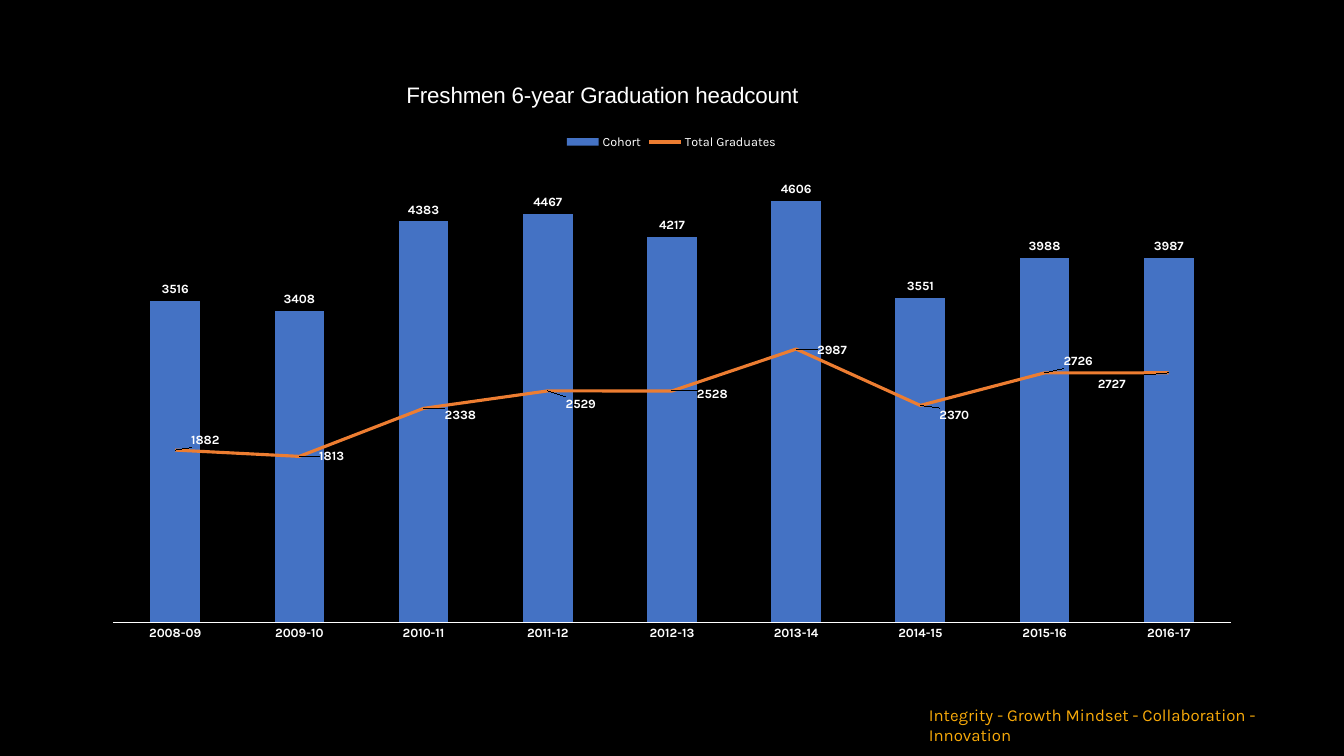
from dataclasses import dataclass
from typing import Any, Optional

import lxml.etree
import pptx
import pptx.chart.data
import pptx.dml.color
import pptx.enum.chart
import pptx.enum.text
import pptx.oxml.ns
import pptx.util

Cm = pptx.util.Cm
Pt = pptx.util.Pt
qn = pptx.oxml.ns.qn

COLORS = {
    "background": "000000",
    "text": "FFFFFF",
    "cohort": "4472C4",
    "graduates": "ED7D31",
    "motto": "F8AA0A",
}
FONTS = {
    "chart": {"name": "Karla", "size": Pt(10)},
    "title": {"name": "Arial", "size": Pt(16), "bold": False},
    "legend": {"name": "Karla", "size": Pt(9), "bold": False},
    "label": {"name": "Karla", "size": Pt(9), "bold": True},
    "motto": {"name": "Karla", "size": Pt(12)},
}


@dataclass(frozen=True)
class Box:
    left: float
    top: float
    width: Optional[float] = None
    height: Optional[float] = None

    def lengths(self) -> list[int]:
        return [Cm(v) for v in (self.left, self.top, self.width, self.height)]


@dataclass(frozen=True)
class Headcount:
    name: str
    values: tuple[int, ...]


CHART_BOX = Box(2.24, 1.73, 29.36, 14.71)
PLOT_BOX = Box(0.61, 2.43, 28.17, 11.52)
TITLE_BOX = Box(7.9, 0.2)
MOTTO_BOX = Box(23.16, 17.63, 10.03, 0.76)

YEARS = [f"{year}-{year % 100 + 1:02d}" for year in range(2008, 2017)]
HEADCOUNTS = (
    Headcount("Cohort", (3516, 3408, 4383, 4467, 4217, 4606, 3551, 3988, 3987)),
    Headcount("Total Graduates", (1882, 1813, 2338, 2529, 2528, 2987, 2370, 2726, 2727)),
)
GRADUATE_LABEL_SHIFTS = (
    Box(0.3, -0.25), Box(0.4, 0), Box(0.43, 0.18),
    Box(0.35, 0.33), Box(0.53, 0.08), Box(0.43, 0.03),
    Box(0.38, 0.25), Box(0.38, -0.3), Box(-1.89, 0.28),
)


def rgb(color: str) -> pptx.dml.color.RGBColor:
    return pptx.dml.color.RGBColor.from_string(COLORS[color])


def set_attributes(target: Any, values: dict[str, Any]) -> None:
    for attribute, value in values.items():
        setattr(target, attribute, value)


def style_font(font: Any, style: str, color: str = "text") -> None:
    set_attributes(font, FONTS[style])
    font.color.rgb = rgb(color)


def add_element(parent: Any, tag: str, value: Any = None) -> Any:
    element = lxml.etree.SubElement(parent, qn(tag))
    if value is not None:
        element.set("val", str(value))
    return element


def set_layout(parent: Any, box: Box, after: Optional[str] = None) -> None:
    for previous in parent.findall(qn("c:layout")):
        parent.remove(previous)
    layout = add_element(parent, "c:layout")
    manual = add_element(layout, "c:manualLayout")
    if box.width is not None:
        add_element(manual, "c:layoutTarget", "inner")
    if after != "c:idx":
        add_element(manual, "c:xMode", "edge")
        add_element(manual, "c:yMode", "edge")
    fractions = {
        "c:x": (box.left, CHART_BOX.width),
        "c:y": (box.top, CHART_BOX.height),
        "c:w": (box.width, CHART_BOX.width),
        "c:h": (box.height, CHART_BOX.height),
    }
    for tag, (length, whole) in fractions.items():
        if length is not None:
            add_element(manual, tag, length / whole)
    if after:
        parent.find(qn(after)).addnext(layout)
    else:
        parent.insert(0, layout)


def move_graduates_to_line(plot_area: Any) -> None:
    bars = plot_area.find(qn("c:barChart"))
    graduates = bars.findall(qn("c:ser"))[1]
    for bar_setting in graduates.findall(qn("c:invertIfNegative")):
        graduates.remove(bar_setting)
    line = add_element(plot_area, "c:lineChart")
    add_element(line, "c:grouping", "standard")
    add_element(line, "c:varyColors", 0)
    line.append(graduates)
    add_element(line, "c:marker", 1)
    for axis in bars.findall(qn("c:axId")):
        add_element(line, "c:axId", axis.get("val"))
    bars.addnext(line)


def style_labels(series: Any, position: Any) -> None:
    labels = series.data_labels
    set_attributes(labels, {"show_value": True, "position": position})
    style_font(labels.font, "label")


def style_axes(chart: Any) -> None:
    years = chart.category_axis
    years.major_tick_mark = pptx.enum.chart.XL_TICK_MARK.NONE
    years.format.line.color.rgb = rgb("text")
    years.format.line.width = Pt(0.75)
    style_font(years.tick_labels.font, "label")
    set_attributes(chart.value_axis, {
        "visible": False,
        "has_major_gridlines": False,
        "minimum_scale": 0,
        "maximum_scale": 5000,
    })


def style_series(chart: Any) -> None:
    cohort_plot, graduate_plot = chart.plots
    set_attributes(cohort_plot, {
        "gap_width": 150, "overlap": -25, "vary_by_categories": False,
    })
    cohort = cohort_plot.series[0]
    cohort.format.fill.solid()
    cohort.format.fill.fore_color.rgb = rgb("cohort")
    style_labels(cohort, pptx.enum.chart.XL_LABEL_POSITION.OUTSIDE_END)

    graduates = graduate_plot.series[0]
    graduates.smooth = False
    graduates.marker.style = pptx.enum.chart.XL_MARKER_STYLE.NONE
    graduates.format.line.color.rgb = rgb("graduates")
    graduates.format.line.width = Pt(2.25)
    right = pptx.enum.chart.XL_LABEL_POSITION.RIGHT
    style_labels(graduates, right)
    for index in range(len(YEARS)):
        label = graduates.points[index].data_label
        label.position = right
        style_font(label.font, "label")
    label_elements = graduates.data_labels._element.findall(qn("c:dLbl"))
    for element, shift in zip(label_elements, GRADUATE_LABEL_SHIFTS):
        set_layout(element, shift, after="c:idx")


def add_headcount_chart(slide: Any) -> None:
    data = pptx.chart.data.CategoryChartData()
    data.categories = YEARS
    for headcount in HEADCOUNTS:
        data.add_series(headcount.name, headcount.values)
    chart = slide.shapes.add_chart(
        pptx.enum.chart.XL_CHART_TYPE.COLUMN_CLUSTERED, *CHART_BOX.lengths(), data
    ).chart
    style_font(chart.font, "chart")
    plot_area = chart._chartSpace.chart.plotArea
    move_graduates_to_line(plot_area)
    set_layout(plot_area, PLOT_BOX)

    title = chart.chart_title
    title.text_frame.text = "Freshmen 6-year Graduation headcount"
    style_font(title.text_frame.paragraphs[0].runs[0].font, "title")
    set_layout(title._element, TITLE_BOX, after="c:tx")

    chart.has_legend = True
    set_attributes(chart.legend, {
        "position": pptx.enum.chart.XL_LEGEND_POSITION.TOP,
        "include_in_layout": False,
    })
    style_font(chart.legend.font, "legend")
    style_axes(chart)
    style_series(chart)


def add_motto(slide: Any) -> None:
    motto = slide.shapes.add_textbox(*MOTTO_BOX.lengths()).text_frame
    motto.word_wrap = True
    motto.text = "Integrity - Growth Mindset - Collaboration - Innovation"
    style_font(motto.paragraphs[0].runs[0].font, "motto", "motto")


def main() -> None:
    deck = pptx.Presentation()
    set_attributes(deck, {"slide_width": Cm(33.87), "slide_height": Cm(19.05)})
    slide = deck.slides.add_slide(deck.slide_layouts[6])
    slide.background.fill.solid()
    slide.background.fill.fore_color.rgb = rgb("background")
    add_motto(slide)
    add_headcount_chart(slide)
    deck.save("out.pptx")


if __name__ == "__main__":
    main()
